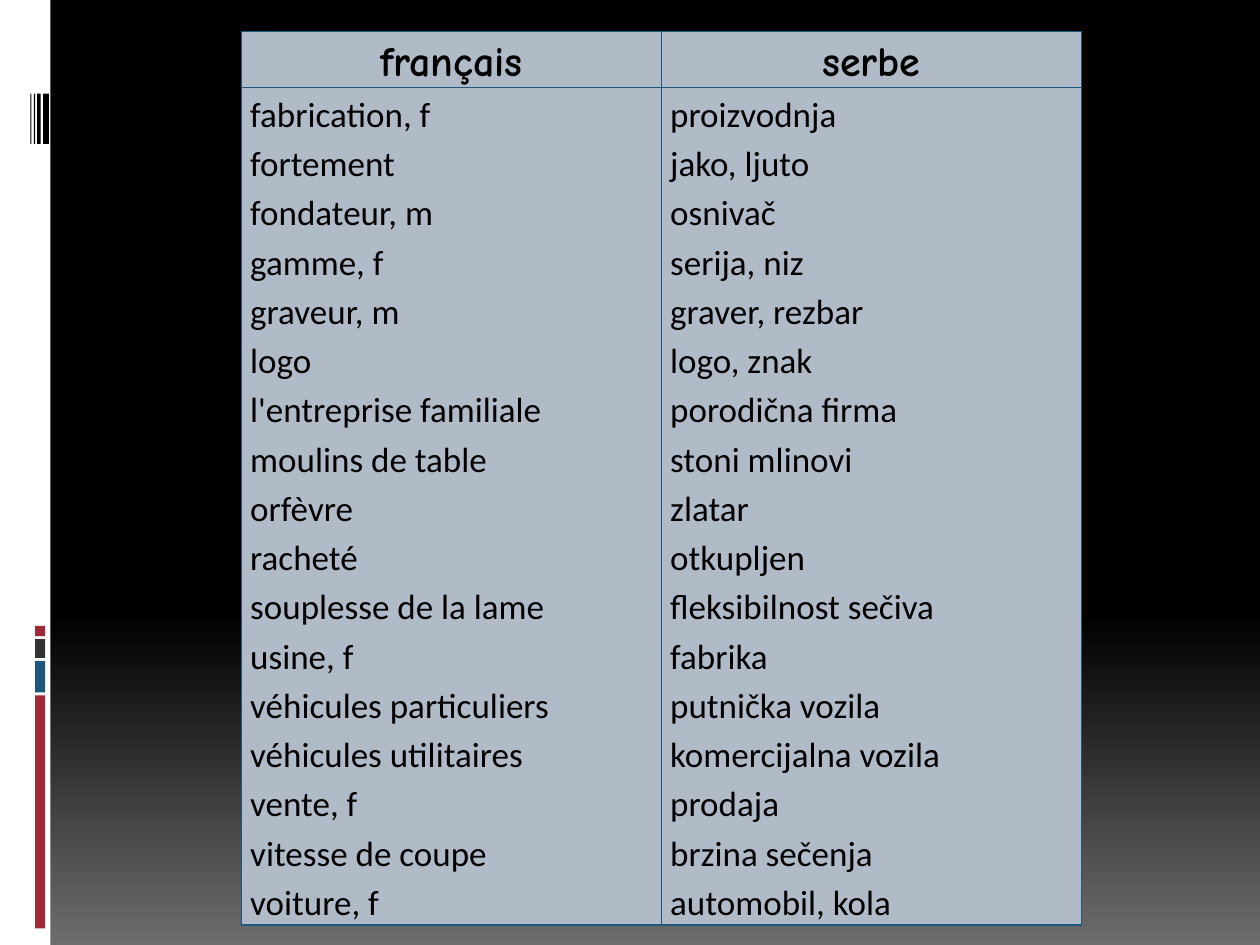
from copy import deepcopy
from typing import NamedTuple

from lxml import etree
from pptx import Presentation
from pptx.dml.color import RGBColor
from pptx.enum import shapes, text
from pptx.oxml.ns import qn
from pptx.util import Pt

BLACK, WHITE, RED, BLUE, GREY = "000000", "FFFFFF", "9F2936", "1B587C", "323232"
CELL_FILL = "B1BBC8"


class Bar(NamedTuple):
    left: float
    top: float
    width: float
    height: float
    fill: str


BARS = [
    Bar(0, 0, 28.8, 540, WHITE),
    *(Bar(20, top, 5.8, height, fill) for top, height, fill in [
        (397.4, 133.2, RED), (377.7, 18, BLUE), (365.2, 10.8, GREY), (357.7, 5.8, RED)]),
    *(Bar(left, 53.5, width, 28.8, BLACK) for left, width in [
        (24.6, 3.4), (21.2, 2), (19.4, 0.7), (17.4, 0.6)]),
]

HEADERS = ["français", "serbe"]
VOCABULARY = [
    ("fabrication, f", "proizvodnja"),
    ("fortement", "jako, ljuto"),
    ("fondateur, m", "osnivač"),
    ("gamme, f", "serija, niz"),
    ("graveur, m", "graver, rezbar"),
    ("logo", "logo, znak"),
    ("l'entreprise familiale", "porodična firma"),
    ("moulins de table", "stoni mlinovi"),
    ("orfèvre", "zlatar"),
    ("racheté", "otkupljen"),
    ("souplesse de la lame", "fleksibilnost sečiva"),
    ("usine, f", "fabrika"),
    ("véhicules particuliers", "putnička vozila"),
    ("véhicules utilitaires", "komercijalna vozila"),
    ("vente, f", "prodaja"),
    ("vitesse de coupe", "brzina sečenja"),
    ("voiture, f", "automobil, kola"),
]


def rgb(value: str) -> RGBColor:
    return RGBColor.from_string(value)


def paint_background(s) -> None:
    """Fade from black to grey over the lower third."""
    fill = s.background.fill
    fill.gradient()
    fill.gradient_angle = 270
    for stop, position, color in zip(fill.gradient_stops, (0.65, 1), (BLACK, "6D6D6D")):
        stop.position = position
        stop.color.rgb = rgb(color)
    stops = next(s.background._cSld.iter(qn("a:gsLst")))
    first = deepcopy(stops[0])
    first.set("pos", "0")
    stops.insert(0, first)


def add_bar(s, bar: Bar) -> None:
    sp = s.shapes.add_shape(shapes.MSO_SHAPE.RECTANGLE, Pt(bar.left), Pt(bar.top),
                            Pt(bar.width), Pt(bar.height))
    sp.shadow.inherit = False
    sp.fill.solid()
    sp.fill.fore_color.rgb = rgb(bar.fill)
    sp.line.fill.background()


def write(tf, lines: list[str], *, size: float, font: str, bold: bool = False,
          align=text.PP_ALIGN.LEFT, color: str = BLACK) -> None:
    for i, line in enumerate(lines):
        p = tf.paragraphs[0] if i == 0 else tf.add_paragraph()
        p.alignment = align
        p.line_spacing = 1.15
        r = p.add_run()
        r.text = line
        r.font.size, r.font.name, r.font.bold = Pt(size), font, bold
        r.font.color.rgb = rgb(color)


def style_cell(cell) -> None:
    cell.margin_left = cell.margin_right = Pt(5)
    cell.margin_top = cell.margin_bottom = 0
    tc_pr = cell._tc.get_or_add_tcPr()
    for side in ("lnL", "lnR", "lnT", "lnB"):
        ln = etree.SubElement(tc_pr, qn(f"a:{side}"), w=str(Pt(0.94)))
        solid = etree.SubElement(ln, qn("a:solidFill"))
        etree.SubElement(solid, qn("a:srgbClr"), val=BLUE)
    cell.fill.solid()
    cell.fill.fore_color.rgb = rgb(CELL_FILL)


def add_vocabulary(s) -> None:
    table = s.shapes.add_table(2, 2, Pt(138), Pt(18), Pt(480), Pt(510)).table
    table.first_row = table.horz_banding = False
    for row, height in zip(table.rows, (32, 478)):
        row.height = Pt(height)
    for col, (header, words) in enumerate(zip(HEADERS, zip(*VOCABULARY))):
        head, body = table.cell(0, col), table.cell(1, col)
        style_cell(head)
        style_cell(body)
        write(head.text_frame, [header], size=24, font="Comic Neue", bold=True,
              align=text.PP_ALIGN.CENTER)
        write(body.text_frame, list(words), size=20, font="Calibri")


def main() -> None:
    prs = Presentation()
    prs.slide_width, prs.slide_height = Pt(720), Pt(540)
    s = prs.slides.add_slide(prs.slide_layouts[6])
    paint_background(s)
    for bar in BARS:
        add_bar(s, bar)
    add_vocabulary(s)
    prs.save("out.pptx")


if __name__ == "__main__":
    main()
